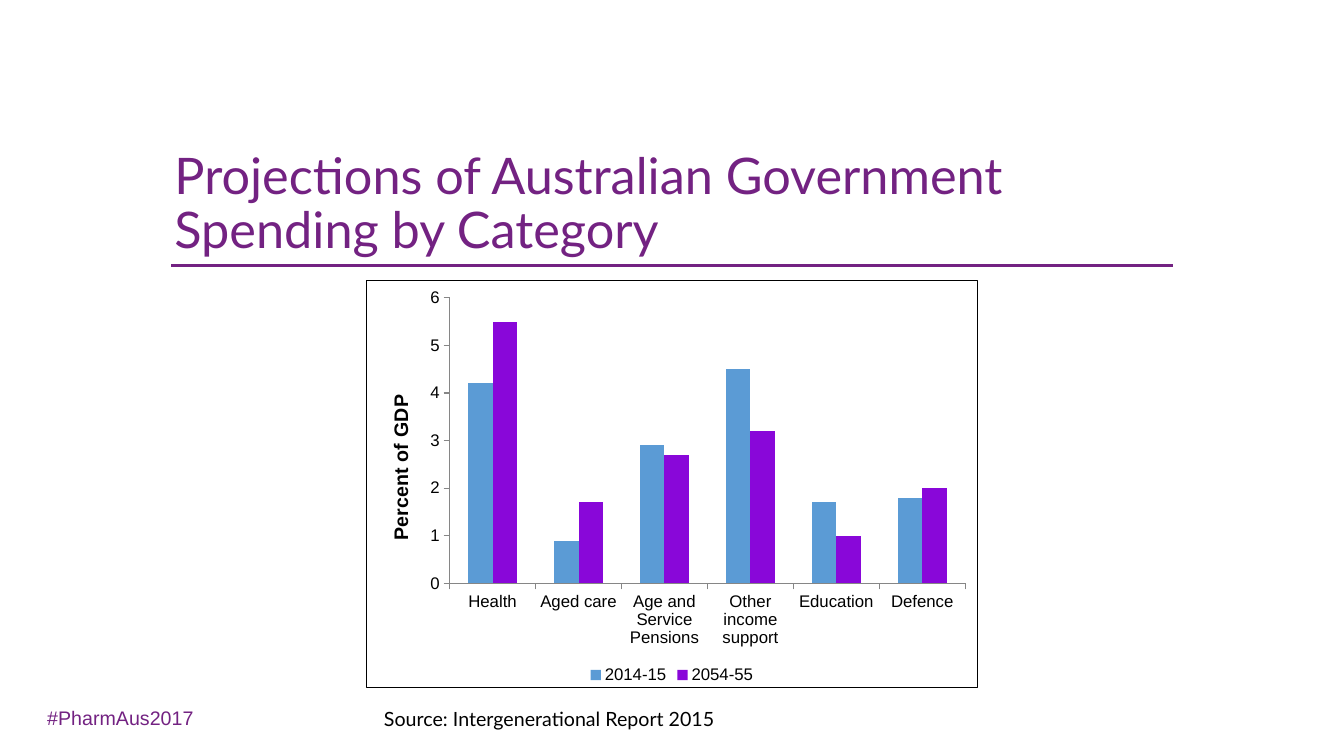
from dataclasses import dataclass

from lxml.etree import SubElement
from pptx import Presentation
from pptx.chart.data import CategoryChartData
from pptx.dml.color import RGBColor
from pptx.enum.chart import XL_CHART_TYPE, XL_LEGEND_POSITION, XL_TICK_MARK
from pptx.enum.shapes import MSO_CONNECTOR
from pptx.enum.text import MSO_ANCHOR, MSO_AUTO_SIZE, PP_ALIGN
from pptx.oxml import parse_xml
from pptx.oxml.ns import nsdecls, qn
from pptx.util import Inches, Pt


@dataclass(frozen=True)
class Theme:
    purple: str = "732282"
    black: str = "000000"
    axis: str = "868686"
    bars: tuple = ("5B9BD5", "8907D9")
    heading_font: str = "Lato"
    body_font: str = "Arial"
    title_size: int = 36
    text_size: int = 14
    label_size: int = 12


class SpendingSlide:
    """Holds the theme and the slide; lengths are percentages of the slide's size."""

    def __init__(self, deck, theme):
        self.deck = deck
        self.theme = theme
        self.slide = deck.slides.add_slide(deck.slide_layouts[5])

    def across(self, share):
        return int(self.deck.slide_width * share / 100)

    def down(self, share):
        return int(self.deck.slide_height * share / 100)

    def box(self, left, top, width, height):
        return self.across(left), self.down(top), self.across(width), self.down(height)

    def style(self, font, name, size, color, bold=False):
        font.name, font.size, font.bold = name, Pt(size), bold
        font.color.rgb = RGBColor.from_string(color)

    def title(self, wording, *area):
        heading = self.slide.shapes.title
        heading.left, heading.top, heading.width, heading.height = self.box(*area)
        frame = heading.text_frame
        frame.text = wording
        frame.auto_size = MSO_AUTO_SIZE.NONE
        frame.vertical_anchor = MSO_ANCHOR.MIDDLE
        line = frame.paragraphs[0]
        line.alignment, line.line_spacing = PP_ALIGN.LEFT, 0.9
        self.style(line.font, self.theme.heading_font, self.theme.title_size, self.theme.purple)

    def rule(self, left, right, top):
        underline = self.slide.shapes.add_connector(
            MSO_CONNECTOR.STRAIGHT,
            self.across(left), self.down(top), self.across(right), self.down(top))
        underline.line.color.rgb = RGBColor.from_string(self.theme.purple)
        underline.line.width = Pt(2)
        SubElement(underline._element.spPr, qn("a:effectLst"))

    def text(self, wording, font_name, color, *area):
        frame = self.slide.shapes.add_textbox(*self.box(*area)).text_frame
        frame.word_wrap = True
        frame.text = wording
        self.style(frame.paragraphs[0].font, font_name, self.theme.text_size, color)

    def column_chart(self, categories, spending, axis_title, *area):
        theme = self.theme
        data = CategoryChartData()
        data.categories = categories
        for period, shares in spending.items():
            data.add_series(period, shares)
        chart = self.slide.shapes.add_chart(
            XL_CHART_TYPE.COLUMN_CLUSTERED, *self.box(*area), data).chart
        self.style(chart.font, theme.body_font, theme.label_size, theme.black)
        chart.has_title = False
        chart.has_legend = True
        chart.legend.position = XL_LEGEND_POSITION.BOTTOM
        chart.legend.include_in_layout = False
        self.style(chart.legend.font, theme.body_font, theme.label_size, theme.black)

        plot = chart.plots[0]
        plot.gap_width, plot.overlap, plot.vary_by_categories = 150, 0, False
        for period, color in zip(plot.series, theme.bars):
            period.format.fill.solid()
            period.format.fill.fore_color.rgb = RGBColor.from_string(color)

        for axis in (chart.category_axis, chart.value_axis):
            axis.has_major_gridlines = False
            axis.major_tick_mark = XL_TICK_MARK.OUTSIDE
            axis.minor_tick_mark = XL_TICK_MARK.NONE
            axis.format.line.color.rgb = RGBColor.from_string(theme.axis)
            self.style(axis.tick_labels.font, theme.body_font, theme.label_size, theme.black)
        percent = chart.value_axis
        percent.minimum_scale, percent.maximum_scale, percent.major_unit = 0, 6, 1
        label = percent.axis_title.text_frame
        label.text = axis_title
        self.style(label.paragraphs[0].font, theme.body_font, theme.text_size, theme.black, True)
        self.frame_chart(chart)

    def frame_chart(self, chart):
        border = parse_xml(
            f'<c:spPr {nsdecls("c", "a")}><a:noFill/><a:ln w="{Pt(0.75)}"><a:solidFill>'
            f'<a:srgbClr val="{self.theme.black}"/></a:solidFill></a:ln></c:spPr>')
        chart._chartSpace.find(qn("c:chart")).addnext(border)


def main():
    deck = Presentation()
    deck.slide_width, deck.slide_height = Inches(13.33), Inches(7.5)
    theme = Theme()
    page = SpendingSlide(deck, theme)
    page.rule(12.75, 87.25, 35.07)
    page.title("Projections of Australian Government\vSpending by Category",
               12.23, 17.47, 80.95, 19.33)
    page.text("Source: Intergenerational Report 2015", theme.heading_font, theme.black,
              27.83, 92.8, 44.33, 6.13)
    page.column_chart(
        ("Health", "Aged care", "Age and Service Pensions",
         "Other income support", "Education", "Defence"),
        {"2014-15": (4.2, 0.9, 2.9, 4.5, 1.7, 1.8),
         "2054-55": (5.5, 1.7, 2.7, 3.2, 1, 2)},
        "Percent of GDP", 27.23, 37.07, 45.54, 54)
    page.text("#PharmAus2017", theme.body_font, theme.purple, 2.78, 92.67, 12.83, 4.53)
    deck.save("out.pptx")


if __name__ == "__main__":
    main()
